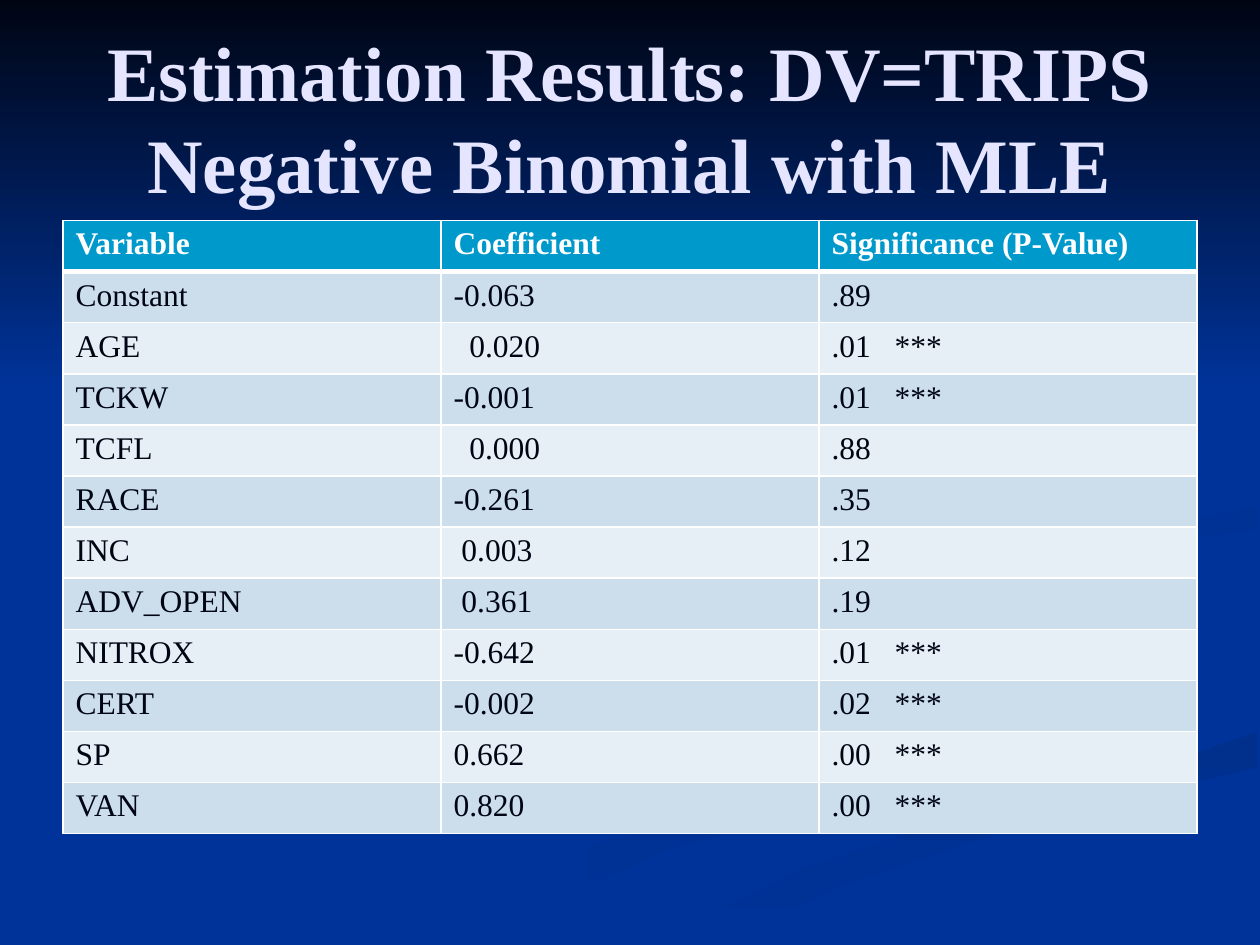
from lxml.etree import SubElement
from pptx import Presentation
from pptx.dml.color import RGBColor
from pptx.enum.text import MSO_ANCHOR, MSO_AUTO_SIZE, PP_ALIGN
from pptx.oxml.ns import qn
from pptx.util import Emu, Pt

PX = 9144  # 100 px to the inch
FONT = "Times New Roman"
COLORS = {
    "background": "003399",
    "night": "000514",
    "title": "E5E5FF",
    "white": "FFFFFF",
    "header": "0099CC",
    "odd_row": "CCDEEC",
    "even_row": "E7EFF6",
    "shade": "003193",
    "shade_deep": "002F8C",
    "shade_soft": "003091",
}
# Each ribbon: first colour, last colour, clockwise angle, outline in px
RIBBONS = [
    ("background", "shade", 0, [
        (781, 553), (614, 496), (575, 459), (581, 484), (783, 559), (759, 590),
        (458, 674), (300, 749), (361, 749), (532, 674), (780, 605), (800, 581)]),
    ("shade_deep", "background", 90, [
        (503, 749), (571, 749), (670, 702), (821, 651), (998, 609), (998, 581),
        (936, 602), (764, 647), (630, 693), (519, 747)]),
    ("shade_soft", "background", 45, [
        (781, 460), (826, 496), (805, 476), (843, 448), (936, 429), (998, 420),
        (998, 402), (933, 415), (821, 434)]),
]
ROWS = [
    ("Variable", "Coefficient", "Significance (P-Value)"),
    ("Constant", "-0.063", ".89"),
    ("AGE", "  0.020", ".01   ***"),
    ("TCKW", "-0.001", ".01   ***"),
    ("TCFL", "  0.000", ".88"),
    ("RACE", "-0.261", ".35"),
    ("INC", " 0.003", ".12"),
    ("ADV_OPEN", " 0.361", ".19"),
    ("NITROX", "-0.642", ".01   ***"),
    ("CERT", "-0.002", ".02   ***"),
    ("SP", "0.662", ".00   ***"),
    ("VAN", "0.820", ".00   ***"),
]


def px(length):
    return Emu(length * PX)


def color(name):
    return RGBColor.from_string(COLORS[name])


def set_font(font, size, color_name, bold):
    font.name, font.size, font.bold = FONT, Pt(size), bold
    font.color.rgb = color(color_name)


def add_gradient_outline(slide, first, last, angle, points):
    """Draw a closed outline without a line; the angle runs clockwise."""
    builder = slide.shapes.build_freeform(*points[0], scale=PX)
    builder.add_line_segments(points[1:], close=True)
    shape = builder.convert_to_shape()
    shape.shadow.inherit = False
    shape.line.fill.background()
    shape.fill.gradient()
    shape.fill.gradient_angle = (360 - angle) % 360
    for stop, name in zip(shape.fill.gradient_stops, (first, last)):
        stop.color.rgb = color(name)


def add_backdrop(slide, width, sky_height):
    slide.background.fill.solid()
    slide.background.fill.fore_color.rgb = color("background")
    for ribbon in RIBBONS:
        add_gradient_outline(slide, *ribbon)
    sky = [(0, 0), (0, sky_height), (width, sky_height), (width, 0)]
    add_gradient_outline(slide, "night", "background", 90, sky)


def place_title(slide, left, top, width, height):
    title = slide.shapes.title
    title.left, title.top, title.width, title.height = map(px, (left, top, width, height))
    frame = title.text_frame
    frame.text = "Estimation Results: DV=TRIPS\vNegative Binomial with MLE"
    frame.auto_size = MSO_AUTO_SIZE.NONE
    frame.vertical_anchor = MSO_ANCHOR.MIDDLE
    paragraph = frame.paragraphs[0]
    paragraph.alignment = PP_ALIGN.CENTER
    set_font(paragraph.font, 44, "title", True)


def set_borders(cell, **widths):
    """Give the sides lnL, lnR, lnT and lnB white lines of the given points."""
    properties = cell._tc.get_or_add_tcPr()
    for index, (side, width) in enumerate(widths.items()):
        line = properties.makeelement(qn(f"a:{side}"), {"w": str(Pt(width))})
        fill = SubElement(line, qn("a:solidFill"))
        SubElement(fill, qn("a:srgbClr"), val=COLORS["white"])
        properties.insert(index, line)


def add_results_table(slide, left, top, width, height):
    frame = slide.shapes.add_table(len(ROWS), len(ROWS[0]), *map(px, (left, top, width, height)))
    table = frame.table
    for row_index, values in enumerate(ROWS):
        is_header = row_index == 0
        fill_name = "header" if is_header else ("even_row", "odd_row")[row_index % 2]
        for column_index, value in enumerate(values):
            cell = table.cell(row_index, column_index)
            cell.text = value
            cell.fill.solid()
            cell.fill.fore_color.rgb = color(fill_name)
            set_font(cell.text_frame.paragraphs[0].font, 18,
                     "white" if is_header else "night", is_header)
            set_borders(cell, lnL=1, lnR=1, lnT=3 if row_index == 1 else 1,
                        lnB=3 if is_header else 1)


def main():
    presentation = Presentation()
    presentation.slide_width, presentation.slide_height = px(1000), px(750)
    slide = presentation.slides.add_slide(presentation.slide_layouts[5])
    add_backdrop(slide, 1000, 308)
    place_title(slide, 50, 30, 900, 125)
    # The title stands in front of the backdrop
    slide.shapes._spTree.append(slide.shapes.title._element)
    add_results_table(slide, 50, 175, 900, 487)
    presentation.save("out.pptx")


if __name__ == "__main__":
    main()
